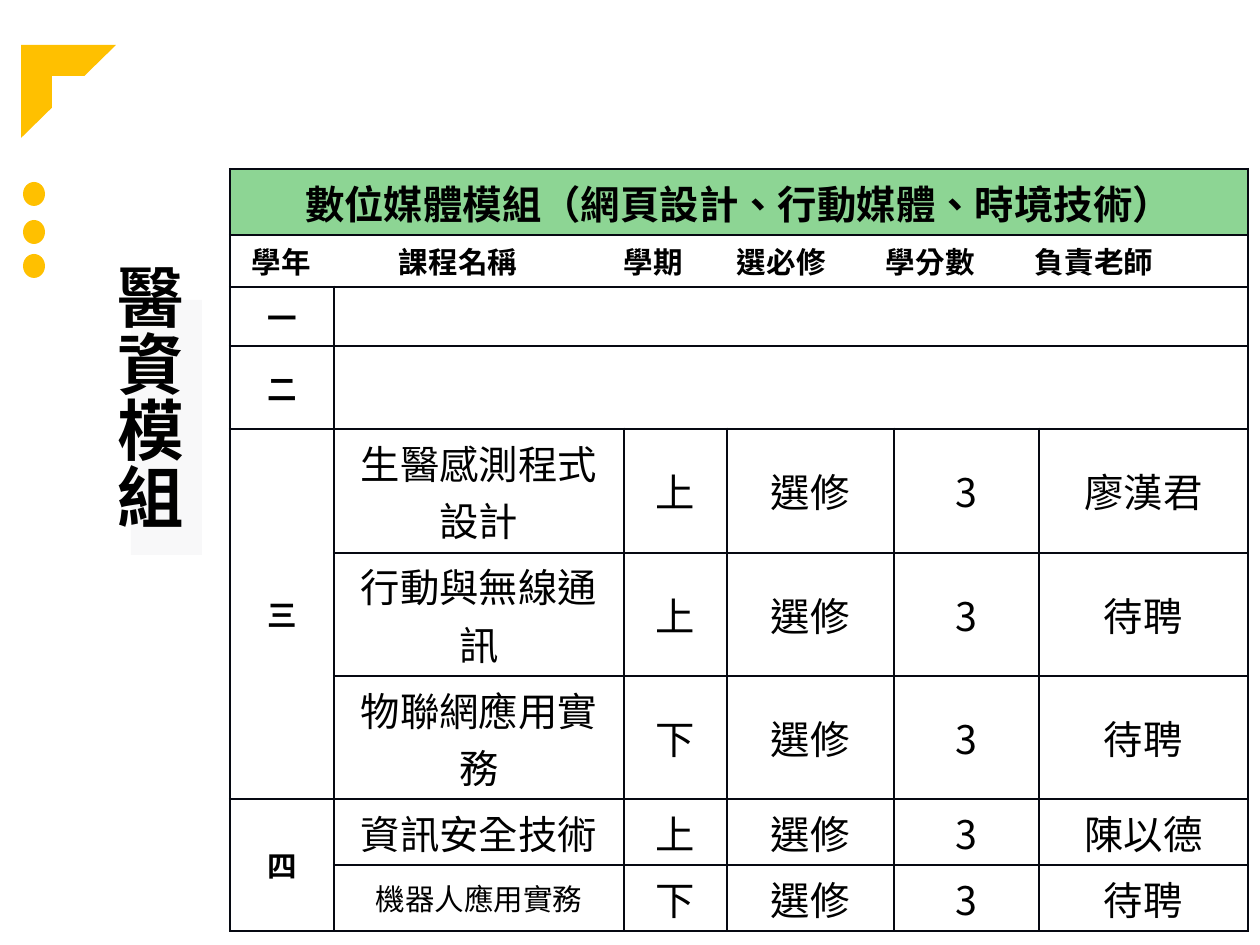
from lxml.etree import SubElement
from pptx import Presentation
from pptx.dml.color import RGBColor
from pptx.enum.lang import MSO_LANGUAGE_ID as Lang
from pptx.enum.shapes import MSO_SHAPE as Shape
from pptx.enum.text import MSO_ANCHOR as Anchor, PP_ALIGN as Align
from pptx.oxml.ns import qn
from pptx.util import Pt

PX = 10320
FONT = "Noto Sans CJK SC"
GOLD, PALE, GREEN, INK, BLACK, WHITE = "FFC000", "F8F8F9", "8DD594", "060912", "000000", "FFFFFF"
COLUMNS = [104, 290, 103, 167, 145, 209]
ROWS = [66, 51, 59, 83, 124, 123, 123, 66, 66]
HEADINGS = ["學年", "課程名稱", "學期", "選必修", "學分數", "負責老師"]
HEADING_STOPS = [147, 372, 485, 634, 783]
YEARS = {2: "一", 3: "二", 4: "三", 7: "四"}
COURSES = [
    ("生醫感測程式設計", "上", "廖漢君", 32),
    ("行動與無線通訊", "上", "待聘", 32),
    ("物聯網應用實務", "下", "待聘", 32),
    ("資訊安全技術", "上", "陳以德", 32),
    ("機器人應用實務", "下", "待聘", 24),
]


def color(value):
    """Turn a hex string into a colour."""
    return RGBColor.from_string(value)


def write(frame, text, size, bold=False, align=Align.CENTER):
    """Put one formatted paragraph into a text frame."""
    para = frame.paragraphs[0]
    para.text = text
    para.alignment = align
    font = para.font
    font.size, font.bold, font.name = Pt(size), bold, FONT
    font.color.rgb = color(BLACK)
    font.language_id = Lang.TRADITIONAL_CHINESE
    latin = font._element.find(qn("a:latin"))
    latin.addnext(latin.makeelement(qn("a:ea"), {"typeface": FONT}))


def add_block(page, preset, left, top, width, height, fill):
    """Add a plain filled shape without outline."""
    block = page.shapes.add_shape(preset, left * PX, top * PX, width * PX, height * PX)
    block.shadow.inherit = False
    block.fill.solid()
    block.fill.fore_color.rgb = color(fill)
    block.line.fill.background()


def add_vertical_title(page, text):
    """Set the title downwards, in front of its pale panel."""
    title = page.shapes.title
    title.left, title.top, title.width, title.height = 99 * PX, 260 * PX, 98 * PX, 296 * PX
    frame = title.text_frame
    frame.word_wrap = True
    frame.vertical_anchor = Anchor.MIDDLE
    frame._txBody.bodyPr.set("vert", "eaVert")
    write(frame, text, 54, bold=True)
    title.element.getparent().append(title.element)


def style_cell(cell, fill):
    """Give a cell its borders, fill and middle anchor."""
    props = cell._tc.get_or_add_tcPr()
    for side in ("a:lnL", "a:lnR", "a:lnT", "a:lnB"):
        line = SubElement(props, qn(side), w=str(Pt(2.25)))
        SubElement(SubElement(line, qn("a:solidFill")), qn("a:srgbClr"), val=INK)
    cell.fill.solid()
    cell.fill.fore_color.rgb = color(fill)
    cell.vertical_anchor = Anchor.MIDDLE


def write_headings(cell):
    """Write the column headings at tab stops in one merged cell."""
    cell.margin_left = 22 * PX
    props = cell.text_frame.paragraphs[0]._p.get_or_add_pPr()
    stops = SubElement(props, qn("a:tabLst"))
    for stop in HEADING_STOPS:
        SubElement(stops, qn("a:tab"), pos=str(stop * PX), algn="l")
    write(cell.text_frame, "\t".join(HEADINGS), 24, bold=True, align=Align.LEFT)


def add_course_table(page):
    """Add the table of courses by school year."""
    frame = page.shapes.add_table(len(ROWS), len(COLUMNS), 230 * PX, 169 * PX,
                                  sum(COLUMNS) * PX, sum(ROWS) * PX)
    table = frame.table
    table.first_row = table.horz_banding = False
    for column, width in zip(table.columns, COLUMNS):
        column.width = width * PX
    for index, (row, height) in enumerate(zip(table.rows, ROWS)):
        row.height = height * PX
        for cell in row.cells:
            style_cell(cell, WHITE if index else GREEN)
    for first, last in [((0, 0), (0, 5)), ((1, 0), (1, 5)), ((2, 1), (2, 5)),
                        ((3, 1), (3, 5)), ((4, 0), (6, 0)), ((7, 0), (8, 0))]:
        table.cell(*first).merge(table.cell(*last))
    write(table.cell(0, 0).text_frame, "數位媒體模組（網頁設計、行動媒體、時境技術）", 32, bold=True)
    write_headings(table.cell(1, 0))
    for row, year in YEARS.items():
        write(table.cell(row, 0).text_frame, year, 24, bold=True)
    for row, (course, term, teacher, size) in enumerate(COURSES, start=4):
        write(table.cell(row, 1).text_frame, course, size)
        for column, text in enumerate([term, "選修", "3", teacher], start=2):
            write(table.cell(row, column).text_frame, text, 32)


def main():
    """Build the slide and save it."""
    deck = Presentation()
    deck.slide_width, deck.slide_height = 1260 * PX, 945 * PX
    page = deck.slides.add_slide(deck.slide_layouts[5])
    add_block(page, Shape.HALF_FRAME, 21, 45, 95, 93, GOLD)
    for top in (182, 220, 254):
        add_block(page, Shape.OVAL, 23, top, 22, 24, GOLD)
    add_block(page, Shape.RECTANGLE, 131, 300, 71, 255, PALE)
    add_vertical_title(page, "醫資模組")
    add_course_table(page)
    deck.save("out.pptx")


if __name__ == "__main__":
    main()
